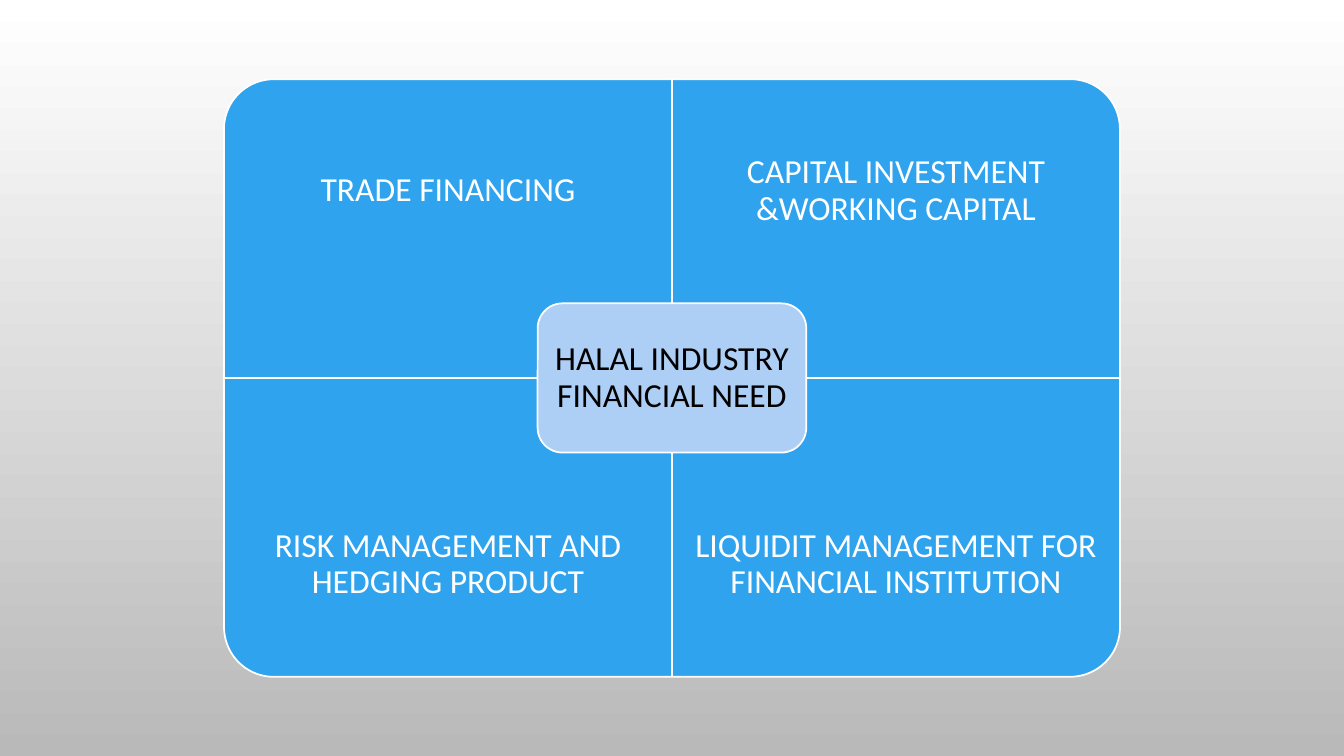
"""Build a four-quadrant slide on the financial needs of the halal industry."""
from pptx import Presentation
from pptx.dml.color import RGBColor
from pptx.enum.shapes import MSO_SHAPE
from pptx.enum.text import MSO_ANCHOR, PP_ALIGN
from pptx.util import Cm, Pt

CENTRE_LABEL = "HALAL INDUSTRY FINANCIAL NEED"
# label, column, row, rotation
QUADRANTS = [
    ("TRADE FINANCING", 0, 0, 270),
    ("CAPITAL INVESTMENT &WORKING CAPITAL", 1, 0, 0),
    ("RISK MANAGEMENT AND HEDGING PRODUCT", 0, 1, 180),
    ("LIQUIDIT MANAGEMENT FOR FINANCIAL INSTITUTION", 1, 1, 90),
]

WHITE = RGBColor(0xFF, 0xFF, 0xFF)
BLACK = RGBColor(0x00, 0x00, 0x00)
GREY = RGBColor(0xB9, 0xB9, 0xB9)
BLUE = RGBColor(0x2F, 0xA3, 0xEE)
PALE_BLUE = RGBColor(0xAD, 0xCE, 0xF5)

QUADRANT_SHAPE = MSO_SHAPE.ROUND_1_RECTANGLE
CENTRE_SHAPE = MSO_SHAPE.ROUNDED_RECTANGLE
MIDDLE = MSO_ANCHOR.MIDDLE
CENTRED = PP_ALIGN.CENTER

SLIDE_WIDTH, SLIDE_HEIGHT = Cm(33.87), Cm(19.05)
QUADRANT_WIDTH, QUADRANT_HEIGHT = Cm(11.29), Cm(7.53)
LABEL_HEIGHT = Cm(5.64)
CENTRE_WIDTH, CENTRE_HEIGHT = Cm(6.77), Cm(3.76)
MATRIX_LEFT = SLIDE_WIDTH // 2 - QUADRANT_WIDTH
MATRIX_TOP = SLIDE_HEIGHT // 2 - QUADRANT_HEIGHT


def add_block(page, kind, middle_x, middle_y, width, height, colour):
    """Add a white-edged shape around a middle point."""
    block = page.shapes.add_shape(
        kind, middle_x - width // 2, middle_y - height // 2, width, height)
    block.shadow.inherit = False
    block.fill.solid()
    block.fill.fore_color.rgb = colour
    block.line.color.rgb = WHITE
    block.line.width = Pt(1.25)
    return block


def write_label(box, label, colour, inset):
    """Write one centred label into a box."""
    frame = box.text_frame
    frame.word_wrap = True
    frame.vertical_anchor = MIDDLE
    frame.margin_left = frame.margin_right = inset
    frame.margin_top = frame.margin_bottom = inset
    para = frame.paragraphs[0]
    para.text = label
    para.alignment = CENTRED
    para.line_spacing = 0.9
    para.font.name = "Calibri"
    para.font.size = Pt(24)
    para.font.color.rgb = colour


def add_quadrant(page, label, column, row, rotation):
    """Add one quadrant with its label towards the outer edge."""
    left = MATRIX_LEFT + column * QUADRANT_WIDTH
    top = MATRIX_TOP + row * QUADRANT_HEIGHT
    width, height = QUADRANT_WIDTH, QUADRANT_HEIGHT
    if rotation % 180:
        width, height = height, width
    block = add_block(page, QUADRANT_SHAPE, left + QUADRANT_WIDTH // 2,
                      top + QUADRANT_HEIGHT // 2, width, height, BLUE)
    block.rotation = rotation
    label_top = top + row * (QUADRANT_HEIGHT - LABEL_HEIGHT)
    box = page.shapes.add_textbox(left, label_top, QUADRANT_WIDTH, LABEL_HEIGHT)
    write_label(box, label, WHITE, Cm(0.48))


def main():
    """Build and save the deck."""
    deck = Presentation()
    deck.slide_width, deck.slide_height = SLIDE_WIDTH, SLIDE_HEIGHT
    page = deck.slides.add_slide(deck.slide_layouts[6])
    backdrop = page.background.fill
    backdrop.gradient()
    backdrop.gradient_angle = 270
    for stop, colour in zip(backdrop.gradient_stops, (WHITE, GREY)):
        stop.color.rgb = colour
    for quadrant in QUADRANTS:
        add_quadrant(page, *quadrant)
    centre = add_block(page, CENTRE_SHAPE, SLIDE_WIDTH // 2, SLIDE_HEIGHT // 2,
                       CENTRE_WIDTH, CENTRE_HEIGHT, PALE_BLUE)
    write_label(centre, CENTRE_LABEL, BLACK, Cm(0.2))
    deck.save("out.pptx")


if __name__ == "__main__":
    main()
